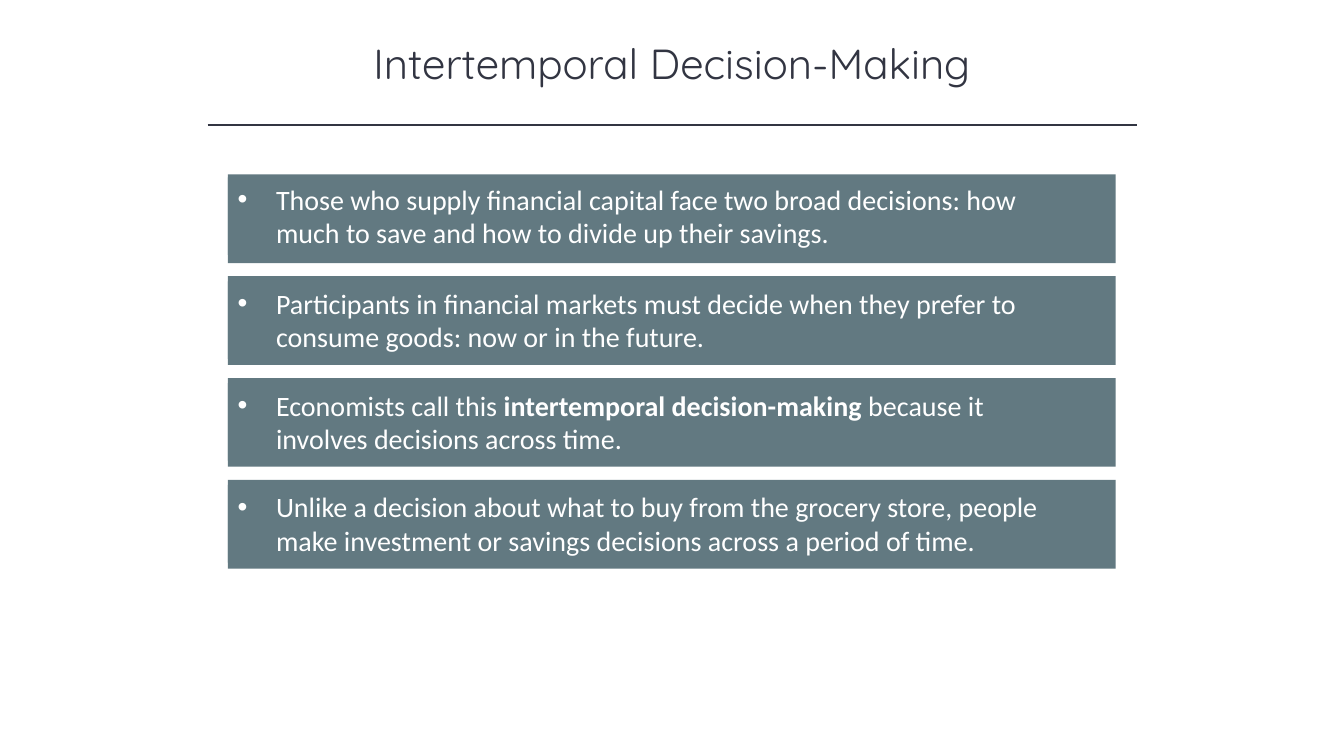
from dataclasses import dataclass

from lxml import etree
from pptx import Presentation
from pptx.dml.color import RGBColor
from pptx.enum.shapes import MSO_CONNECTOR, MSO_SHAPE
from pptx.enum.text import MSO_ANCHOR, MSO_AUTO_SIZE, PP_ALIGN
from pptx.oxml.ns import qn
from pptx.util import Inches, Pt

RECT = MSO_SHAPE.RECTANGLE
LINE = MSO_CONNECTOR.STRAIGHT
TOP = MSO_ANCHOR.TOP
FIXED = MSO_AUTO_SIZE.NONE
LEFT, CENTER = PP_ALIGN.LEFT, PP_ALIGN.CENTER

INK = RGBColor(0x32, 0x35, 0x42)
SLATE = RGBColor(0x62, 0x79, 0x81)
WHITE = RGBColor(0xFF, 0xFF, 0xFF)

WIDE, HIGH = Inches(13.33), Inches(7.5)
EDGE = 16.95
START = 23.07
PITCH = 13.47
INDENT = Inches(0.38)


@dataclass(frozen=True)
class Card:
    words: tuple[str, ...]
    drop: float = 0.67


CARDS = (
    Card(("Those who supply financial capital face two broad decisions: how much to save "
          "and how to divide up their savings.",), drop=0.4),
    Card(("Participants in financial markets must decide when they prefer to consume goods: "
          "now or in the future.",)),
    Card(("Economists call this ", "intertemporal decision-making",
          " because it involves decisions across time.")),
    Card(("Unlike a decision about what to buy from the grocery store, people make investment "
          "or savings decisions across a period of time.",)),
)


def col(share: float) -> int:
    return round(WIDE * share / 100)


def row(share: float) -> int:
    return round(HIGH * share / 100)


def write(shape, words: tuple[str, ...], *, font: str, size: float, color: RGBColor,
          align=LEFT, bullet: bool = False) -> None:
    frame = shape.text_frame
    frame.word_wrap = True
    frame.auto_size = FIXED
    frame.vertical_anchor = TOP
    para = frame.paragraphs[0]
    para.alignment = align
    for index, text in enumerate(words):
        run = para.add_run()
        run.text = text
        run.font.name = font
        run.font.size = Pt(size)
        run.font.bold = index % 2 == 1
        run.font.color.rgb = color
    if bullet:
        props = para._p.get_or_add_pPr()
        props.set("marL", str(INDENT))
        props.set("indent", str(-INDENT))
        etree.SubElement(props, qn("a:buFont"), typeface="Arial")
        etree.SubElement(props, qn("a:buChar"), char="•")


def add_box(group, top: float, width: float, height: float):
    box = group.shapes.add_shape(RECT, col(EDGE), row(top), col(width), row(height))
    box.shadow.inherit = False
    box.fill.solid()
    box.fill.fore_color.rgb = SLATE
    box.line.fill.background()
    return box


def add_card(slide, card: Card, top: float) -> None:
    group = slide.shapes.add_group_shape()
    add_box(group, top, 66.07, 11.73)
    label = add_box(group, top + card.drop, 64.05, 10.27)
    write(label, card.words, font="Calibri", size=20, color=WHITE, bullet=True)


def add_title(slide, text: str) -> None:
    title = slide.shapes.title
    title.left, title.top = col(12.5), row(4.27)
    title.width, title.height = col(75), row(8.13)
    write(title, (text,), font="Quicksand", size=30, color=INK, align=CENTER)


def add_rule(slide) -> None:
    rule = slide.shapes.add_connector(LINE, col(15.45), row(16.53), col(84.6), row(16.53))
    rule.line.color.rgb = INK
    rule.line.width = Pt(1)
    etree.SubElement(rule._element.spPr, qn("a:effectLst"))


def main() -> None:
    deck = Presentation()
    deck.slide_width, deck.slide_height = WIDE, HIGH
    slide = deck.slides.add_slide(deck.slide_layouts[5])
    add_title(slide, "Intertemporal Decision-Making")
    add_rule(slide)
    for index, card in enumerate(CARDS):
        add_card(slide, card, START + index * PITCH)
    deck.save("out.pptx")


if __name__ == "__main__":
    main()
